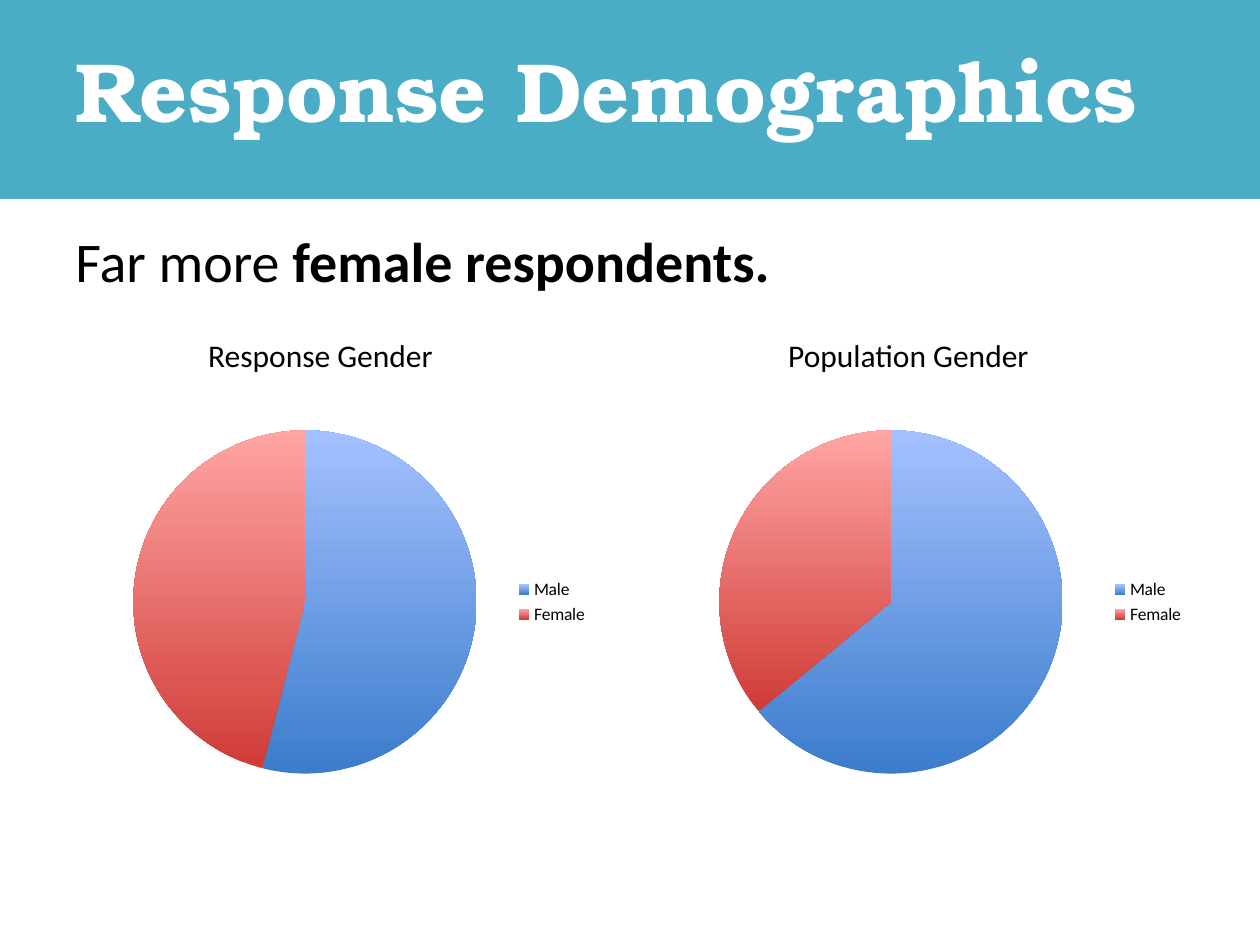
from dataclasses import dataclass

from pptx import Presentation
from pptx import util as u
from pptx.chart import data as cd
from pptx.dml.color import RGBColor
from pptx.enum import chart as ch, shapes, text

PX_PER_INCH = 126


@dataclass(frozen=True)
class Theme:
    band: str = "4BACC6"
    title_ink: str = "FFFFFF"
    ink: str = "000000"
    slices: tuple = (("3B7CCB", "A4C1FF"), ("CF3B37", "FFA5A4"))
    title_font: str = "TeX Gyre Bonum"
    body_font: str = "Calibri"
    title_size: int = 48
    body_size: int = 32
    caption_size: int = 18
    legend_size: int = 10


THEME = Theme()


def px(n):
    return u.Emu(round(n * 914400 / PX_PER_INCH))


def place(box):
    return [px(n) for n in box]


def rgb(value):
    return RGBColor.from_string(value)


def add_text(s, box, runs, size=THEME.body_size, font=THEME.body_font,
             color=THEME.ink, align=text.PP_ALIGN.LEFT,
             anchor=text.MSO_ANCHOR.TOP, autosize=text.MSO_AUTO_SIZE.NONE):
    tf = s.shapes.add_textbox(*place(box)).text_frame
    tf.word_wrap = True
    tf.auto_size = autosize
    tf.vertical_anchor = anchor
    p = tf.paragraphs[0]
    p.alignment = align
    for content, bold in runs:
        r = p.add_run()
        r.text = content
        r.font.name = font
        r.font.size = u.Pt(size)
        r.font.bold = bold
        r.font.color.rgb = rgb(color)


def add_header(s, box, title):
    x, y, w, h = box
    sp = s.shapes.add_shape(shapes.MSO_SHAPE.RECTANGLE, *place(box))
    sp.shadow.inherit = False
    sp.fill.solid()
    sp.fill.fore_color.rgb = rgb(THEME.band)
    sp.line.fill.background()
    add_text(s, (x + 63, y + 10, w - 126, h - 41), [(title, True)],
             size=THEME.title_size, font=THEME.title_font,
             color=THEME.title_ink, anchor=text.MSO_ANCHOR.MIDDLE)


def add_caption(s, box, caption):
    add_text(s, box, [(caption, False)], size=THEME.caption_size,
             align=text.PP_ALIGN.CENTER,
             autosize=text.MSO_AUTO_SIZE.SHAPE_TO_FIT_TEXT)


def add_gender_pie(s, box, values):
    data = cd.CategoryChartData()
    data.categories = ["Male", "Female"]
    data.add_series("Series 1", values)
    chart = s.shapes.add_chart(ch.XL_CHART_TYPE.PIE, *place(box), data).chart
    chart.has_title = False
    chart.font.name = THEME.body_font
    chart.font.size = u.Pt(THEME.legend_size)
    chart.font.color.rgb = rgb(THEME.ink)
    chart.has_legend = True
    chart.legend.position = ch.XL_LEGEND_POSITION.RIGHT
    chart.legend.include_in_layout = False
    plot = chart.plots[0]
    plot.vary_by_categories = True
    for i, colors in enumerate(THEME.slices):
        fmt = plot.series[0].points[i].format
        fmt.line.fill.background()
        fmt.fill.gradient()
        fmt.fill.gradient_angle = 90
        for stop, color in zip(fmt.fill.gradient_stops, colors):
            stop.color.rgb = rgb(color)


def main():
    prs = Presentation()
    prs.slide_width, prs.slide_height = px(1260), px(945)
    s = prs.slides.add_slide(prs.slide_layouts[6])
    add_header(s, (0, 0, 1260, 199), "Response Demographics")
    add_text(s, (63, 220, 1134, 624),
             [("Far more ", False), ("female respondents.", True)])
    add_caption(s, (168, 330, 305, 53), "Response Gender")
    add_caption(s, (746, 330, 325, 50), "Population Gender")
    add_gender_pie(s, (673, 413, 524, 378), (64, 36))
    add_gender_pie(s, (97, 413, 504, 378), (54, 46))
    prs.save("out.pptx")


if __name__ == "__main__":
    main()
